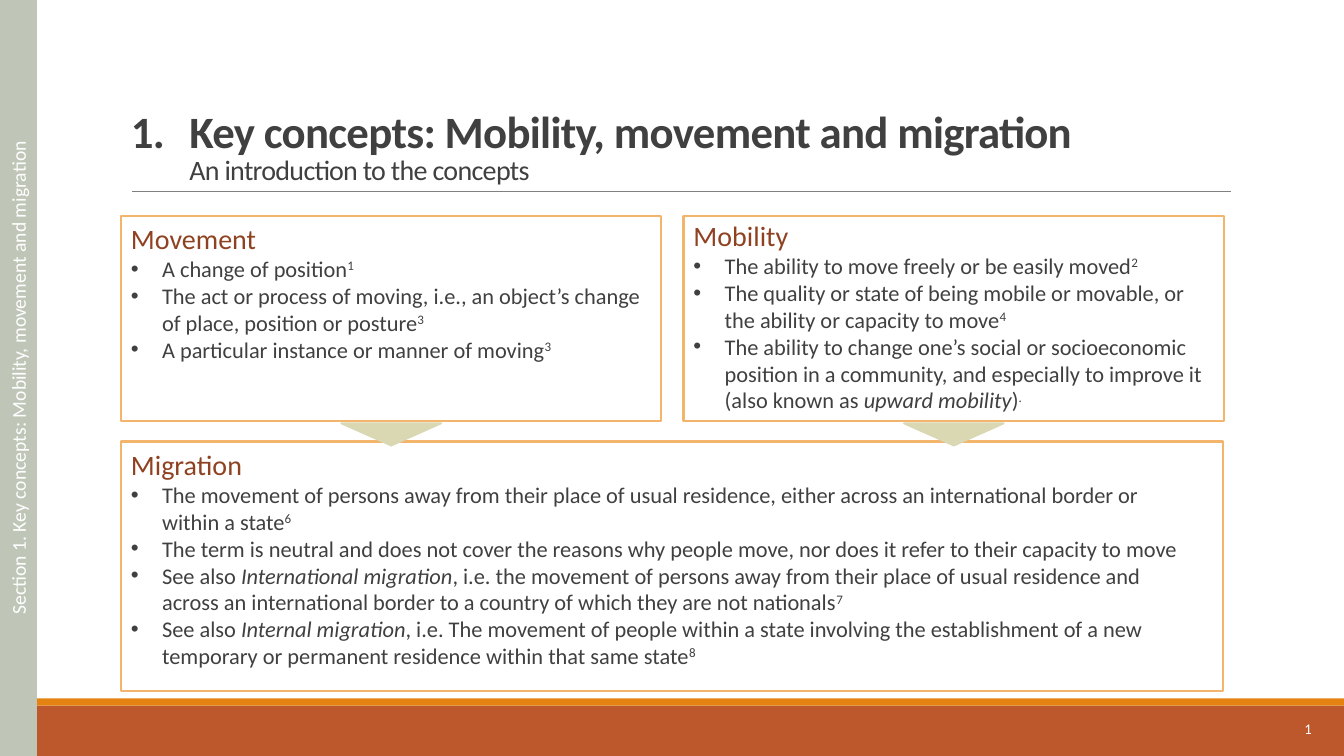
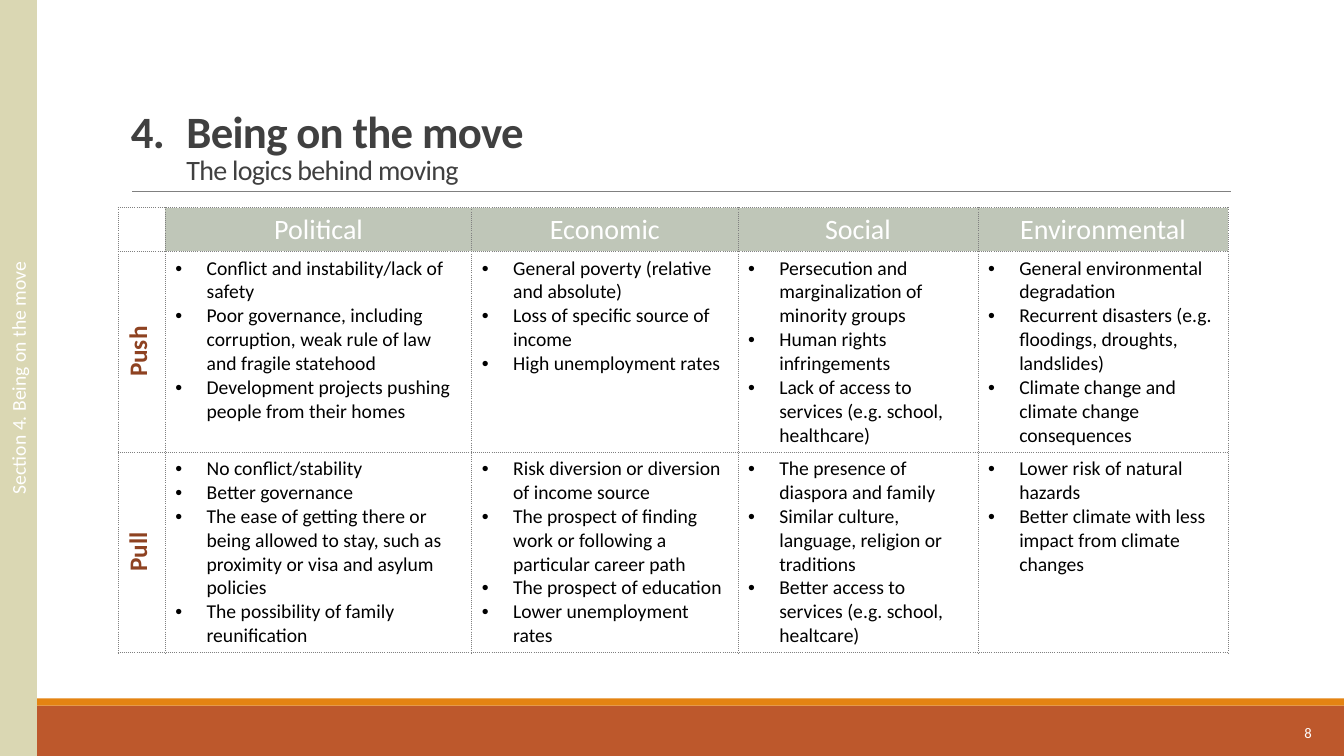
import pptx
import pptx.util
import pptx.dml.color
import pptx.enum.dml
import pptx.enum.shapes
import pptx.enum.text
import pptx.oxml.ns
from lxml import etree

Inches = pptx.util.Inches
Pt = pptx.util.Pt
RGB = pptx.dml.color.RGBColor.from_string
qn = pptx.oxml.ns.qn
SHAPE = pptx.enum.shapes.MSO_SHAPE
ALIGN = pptx.enum.text.PP_ALIGN
ANCHOR = pptx.enum.text.MSO_ANCHOR

FONT = "Calibri"
COLORS = {
    "rust": "BD582C", "orange": "E48312", "border": "F3B56C", "brown": "8E4221",
    "sage": "BFC6B8", "sand": "DAD7B3", "text": "404040", "rule": "808080",
    "white": "FFFFFF", "black": "000000",
}


def add_box(s, x, y, w, h, fill=None, line=None, width=1.25, shape=SHAPE.RECTANGLE):
    sp = s.shapes.add_shape(shape, Inches(x), Inches(y), Inches(w), Inches(h))
    sp.shadow.inherit = False
    if fill:
        sp.fill.solid()
        sp.fill.fore_color.rgb = RGB(COLORS[fill])
    else:
        sp.fill.background()
    if line:
        sp.line.color.rgb = RGB(COLORS[line])
        sp.line.width = Pt(width)
    else:
        sp.line.fill.background()
    return sp


def add_runs(p, runs, size, color, bold=False, bullet=False):
    """Write runs, each a string or a (string, "italic" | "super") pair."""
    if bullet:
        pPr = p._p.get_or_add_pPr()
        pPr.set("marL", str(Inches(0.31)))
        pPr.set("indent", str(-Inches(0.31)))
        etree.SubElement(pPr, qn("a:buFont")).set("typeface", "Arial")
        etree.SubElement(pPr, qn("a:buChar")).set("char", "•")
    for run in runs:
        text, style = (run, None) if isinstance(run, str) else run
        r = p.add_run()
        r.text = text
        r.font.name = FONT
        r.font.size = Pt(size)
        r.font.bold = bold
        r.font.color.rgb = RGB(COLORS[color])
        if style == "italic":
            r.font.italic = True
        elif style == "super":
            r._r.get_or_add_rPr().set("baseline", "30000")


prs = pptx.Presentation()
prs.slide_width = Inches(13.33)
prs.slide_height = Inches(7.5)

# Frame of every slide: bands, rule, title, page number, section bar
frames = [
    {"number": "1.", "title": "Key concepts: Mobility, movement and migration",
     "subtitle": "An introduction to the concepts", "indent": 0.58,
     "page": "1", "page_top": 7.03, "bar": "sage"},
    {"number": "4.", "title": "Being on the move",
     "subtitle": "The logics behind moving", "indent": 0.55,
     "page": "8", "page_top": 7.07, "bar": "sand"},
]
for frame in frames:
    s = prs.slides.add_slide(prs.slide_layouts[6])
    add_box(s, 0, 7, 13.33, 0.5, "rust")
    add_box(s, 0, 6.93, 13.33, 0.07, "orange")

    rule = s.shapes.add_connector(pptx.enum.shapes.MSO_CONNECTOR.STRAIGHT,
                                  Inches(1.31), Inches(1.9), Inches(12.21), Inches(1.9))
    rule.line.color.rgb = RGB(COLORS["rule"])
    rule.line.width = Pt(0.5)
    etree.SubElement(rule._element.spPr, qn("a:effectLst"))

    tf = s.shapes.add_textbox(Inches(1.2), Inches(0.31), Inches(11), Inches(1.59)).text_frame
    tf.word_wrap = True
    tf.vertical_anchor = ANCHOR.BOTTOM
    p = tf.paragraphs[0]
    p.line_spacing = 0.85
    pPr = p._p.get_or_add_pPr()
    pPr.set("marL", str(Inches(frame["indent"])))
    pPr.set("indent", str(-Inches(frame["indent"])))
    add_runs(p, [frame["number"] + "\t" + frame["title"]], 32, "text", bold=True)
    p.add_line_break()
    add_runs(p, [frame["subtitle"]], 20, "text")
    for r in p.runs:
        r._r.get_or_add_rPr().set("spc", "-50")

    tf = s.shapes.add_textbox(Inches(11.68), Inches(frame["page_top"]),
                              Inches(1.43), Inches(0.4)).text_frame
    tf.word_wrap = True
    tf.vertical_anchor = ANCHOR.MIDDLE
    tf.paragraphs[0].alignment = ALIGN.RIGHT
    add_runs(tf.paragraphs[0], [frame["page"]], 10.5, "white")

    tf = add_box(s, 0, 0, 0.36, 7.5, frame["bar"], frame["bar"]).text_frame
    tf._txBody.bodyPr.set("vert", "vert270")
    tf.word_wrap = True
    tf.vertical_anchor = ANCHOR.MIDDLE
    tf.paragraphs[0].alignment = ALIGN.CENTER
    section = "Section " + frame["number"] + " " + frame["title"]
    add_runs(tf.paragraphs[0], [section], 14, "white")

concepts, moving = prs.slides

# Slide 1: three definitions, the upper two leading to the lower one
LEFT, RIGHT, HALF = 1.2, 6.78, 5.36
definitions = [
    {"box": (LEFT, 4.38, 10.93, 2.48), "text": (LEFT, 4.39, 10.8, 2.32),
     "heading": "Migration",
     "points": [
         ["The movement of persons away from their place of usual residence, either across "
          "an international border or within a state", ("6", "super")],
         ["The term is neutral and does not cover the reasons why people move, nor does it "
          "refer to their capacity to move"],
         ["See also ", ("International migration", "italic"),
          ", i.e. the movement of persons away from their place of usual residence and across "
          "an international border to a country of which they are not nationals",
          ("7", "super")],
         ["See also ", ("Internal migration", "italic"),
          ", i.e. The movement of people within a state involving the establishment of a new "
          "temporary or permanent residence within that same state", ("8", "super")],
     ]},
    {"box": (LEFT, 2.14, HALF, 2.04), "text": (LEFT, 2.15, HALF, 1.51),
     "heading": "Movement",
     "points": [
         ["A change of position", ("1", "super")],
         ["The act or process of moving, i.e., an object’s change of place, position or posture",
          ("3", "super")],
         ["A particular instance or manner of moving", ("3", "super")],
     ]},
    {"box": (RIGHT, 2.14, HALF, 2.04), "text": (RIGHT, 2.12, HALF, 2.05),
     "heading": "Mobility",
     "points": [
         ["The ability to move freely or be easily moved", ("2", "super")],
         ["The quality or state of being mobile or movable, or the ability or capacity to move",
          ("4", "super")],
         ["The ability to change one’s social or socioeconomic position in a community, and "
          "especially to improve it (also known as ", ("upward mobility", "italic"), ")",
          (".", "super")],
     ]},
]
for definition in definitions:
    add_box(concepts, *definition["box"], line="border", width=1.5)
    tf = concepts.shapes.add_textbox(*map(Inches, definition["text"])).text_frame
    tf.word_wrap = True
    add_runs(tf.paragraphs[0], [definition["heading"]], 20, "brown")
    for point in definition["points"]:
        add_runs(tf.add_paragraph(), point, 16, "text", bullet=True)

for x in (LEFT, RIGHT):
    arrow = add_box(concepts, x + (HALF - 0.99) / 2, 4.2, 0.99, 0.22, "sand", "sand",
                    shape=SHAPE.ISOSCELES_TRIANGLE)
    arrow.rotation = 180

# Slide 2: push and pull factors by field
fields = ["Political", "Economic", "Social", "Environmental"]
factors = {
    "Push": [
        ["Conflict and instability/lack of safety",
         "Poor governance, including corruption, weak rule of law and fragile statehood",
         "Development projects pushing people from their homes"],
        ["General poverty (relative and absolute)",
         "Loss of specific source of income",
         "High unemployment rates"],
        ["Persecution and marginalization of minority groups",
         "Human rights infringements",
         "Lack of access to services (e.g. school, healthcare)"],
        ["General environmental degradation",
         "Recurrent disasters (e.g. floodings, droughts, landslides)",
         "Climate change and climate change consequences"],
    ],
    "Pull": [
        ["No conflict/stability",
         "Better governance",
         "The ease of getting there or being allowed to stay, such as proximity or visa and "
         "asylum policies",
         "The possibility of family reunification"],
        ["Risk diversion or diversion of income source",
         "The prospect of finding work or following a particular career path",
         "The prospect of education",
         "Lower unemployment rates"],
        ["The presence of diaspora and family",
         "Similar culture, language, religion or traditions",
         "Better access to services (e.g. school, healtcare)"],
        ["Lower risk of natural hazards",
         "Better climate with less impact from climate changes"],
    ],
}
col_widths = [0.47, 3.04, 2.64, 2.38, 2.48]
row_heights = [0.43, 1.99, 1.99]
table = moving.shapes.add_table(3, 5, Inches(1.17), Inches(2.06), Inches(sum(col_widths)),
                                Inches(sum(row_heights))).table
for column, width in zip(table.columns, col_widths):
    column.width = Inches(width)
for row, height in zip(table.rows, row_heights):
    row.height = Inches(height)
for cell in table.iter_cells():
    cell.fill.background()

# Column headings
for col, field in enumerate(fields, start=1):
    cell = table.cell(0, col)
    cell.fill.solid()
    cell.fill.fore_color.rgb = RGB(COLORS["sage"])
    cell.vertical_anchor = ANCHOR.MIDDLE
    p = cell.text_frame.paragraphs[0]
    p.alignment = ALIGN.CENTER
    add_runs(p, [field], 20, "white")

# Row headings and bulleted factors
for row, (direction, lists) in enumerate(factors.items(), start=1):
    cell = table.cell(row, 0)
    cell.vertical_anchor = ANCHOR.MIDDLE
    cell._tc.get_or_add_tcPr().set("vert", "vert270")
    p = cell.text_frame.paragraphs[0]
    p.alignment = ALIGN.CENTER
    add_runs(p, [direction], 18, "brown", bold=True)
    for col, points in enumerate(lists, start=1):
        tf = table.cell(row, col).text_frame
        for i, point in enumerate(points):
            p = tf.add_paragraph() if i else tf.paragraphs[0]
            add_runs(p, [point], 14, "black", bullet=True)

# Dotted cell borders, placed ahead of the fill
for cell in table.iter_cells():
    tcPr = cell._tc.get_or_add_tcPr()
    for i, side in enumerate(("a:lnL", "a:lnR", "a:lnT", "a:lnB")):
        ln = etree.Element(qn(side), w=str(Pt(0.5)))
        tcPr.insert(i, ln)
        fill = etree.SubElement(ln, qn("a:solidFill"))
        etree.SubElement(fill, qn("a:srgbClr")).set("val", COLORS["rule"])
        etree.SubElement(ln, qn("a:prstDash")).set("val", "sysDot")

prs.save("out.pptx")
